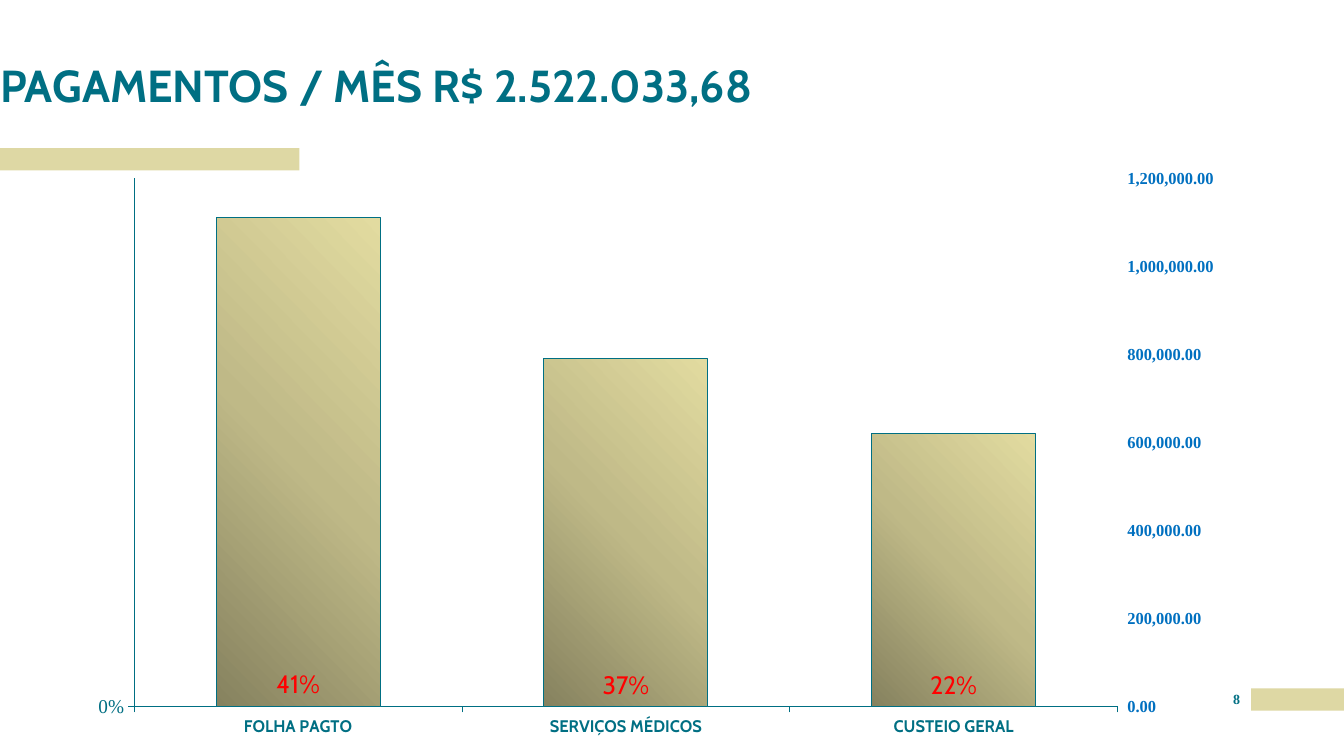
import copy

import pptx
import pptx.chart.axis
import pptx.chart.data
import pptx.dml.color
import pptx.enum.chart
import pptx.enum.shapes
import pptx.enum.text
import pptx.oxml
import pptx.oxml.ns
import pptx.util
from pptx.util import Inches

TEAL = pptx.dml.color.RGBColor(0x00, 0x6F, 0x83)
SAND = pptx.dml.color.RGBColor(0xDE, 0xD8, 0xA4)
BLUE = pptx.dml.color.RGBColor(0x00, 0x70, 0xC0)
RED = pptx.dml.color.RGBColor(0xFF, 0x00, 0x00)
PALE_TEAL = pptx.dml.color.RGBColor(0xA5, 0xE1, 0xE4)

SANS = "Cabin"
SERIF = "Times New Roman"

EXPENSES = ["FOLHA PAGTO", "SERVIÇOS MÉDICOS", "CUSTEIO GERAL"]
SHARES = [0.44, 0.31, 0.25]
SHARE_LABELS = ["41%", "37%", "22%"]
AMOUNTS = [1110000, 790000, 620000]

PLOT_LAYOUT = f"""<c:layout {pptx.oxml.ns.nsdecls("c")}><c:manualLayout>
<c:layoutTarget val="inner"/><c:xMode val="edge"/><c:yMode val="edge"/>
<c:x val="0.088"/><c:y val="0.031"/><c:w val="0.849"/><c:h val="0.905"/>
</c:manualLayout></c:layout>"""

BAR_GRADIENT = f"""<a:gradFill {pptx.oxml.ns.nsdecls("a")} rotWithShape="1"><a:gsLst>
<a:gs pos="0"><a:srgbClr val="86825F"/></a:gs>
<a:gs pos="50000"><a:srgbClr val="BFB987"/></a:gs>
<a:gs pos="100000"><a:srgbClr val="E2DBA0"/></a:gs></a:gsLst>
<a:path path="circle"><a:fillToRect t="100000" r="100000"/></a:path></a:gradFill>"""


class PaymentsSlide:
    def __init__(self, slide):
        self.slide = slide

    def set_font(self, font, size, color, name=SERIF, bold=True):
        font.size = pptx.util.Pt(size)
        font.color.rgb = color
        font.name = name
        font.bold = bold

    def set_line(self, line, color):
        line.color.rgb = color
        line.width = pptx.util.Pt(0.75)

    def clear_margins(self, frame):
        frame.word_wrap = True
        frame.margin_left = frame.margin_right = 0
        frame.margin_top = frame.margin_bottom = 0

    def add_band(self, left, top, width, height):
        band = self.slide.shapes.add_shape(
            pptx.enum.shapes.MSO_SHAPE.RECTANGLE,
            Inches(left), Inches(top), Inches(width), Inches(height))
        band.shadow.inherit = False
        band.fill.solid()
        band.fill.fore_color.rgb = SAND
        band.line.fill.background()

    def set_title(self, text, left, top, width, height):
        title = self.slide.shapes.title
        title.left, title.top = Inches(left), Inches(top)
        title.width, title.height = Inches(width), Inches(height)
        frame = title.text_frame
        frame.text = text
        self.clear_margins(frame)
        frame.auto_size = pptx.enum.text.MSO_AUTO_SIZE.NONE
        frame.vertical_anchor = pptx.enum.text.MSO_ANCHOR.BOTTOM
        heading = frame.paragraphs[0]
        heading.alignment = pptx.enum.text.PP_ALIGN.LEFT
        heading.line_spacing = 0.9
        self.set_font(heading.font, 32, TEAL, SANS)

    def add_page_number(self, text, left, top, width, height):
        box = self.slide.shapes.add_textbox(
            Inches(left), Inches(top), Inches(width), Inches(height))
        box.text_frame.text = text
        self.clear_margins(box.text_frame)
        number = box.text_frame.paragraphs[0]
        number.alignment = pptx.enum.text.PP_ALIGN.CENTER
        self.set_font(number.font, 10, TEAL)

    def scale_axis(self, axis, maximum, step, number_format):
        axis.minimum_scale, axis.maximum_scale = 0, maximum
        axis.major_unit = step
        axis.tick_labels.number_format = number_format
        axis.tick_labels.number_format_is_linked = False

    def add_right_axis(self, chart):
        """Move the last series to its own bars on a right-hand axis."""
        left_bars = chart.element.xpath(".//c:barChart")[0]
        left_category = chart.element.xpath(".//c:catAx")[0]
        left_value = chart.element.xpath(".//c:valAx")[0]
        right_bars, right_category, right_value = map(
            copy.deepcopy, (left_bars, left_category, left_value))
        left_bars.remove(left_bars.xpath("c:ser")[1])
        right_bars.remove(right_bars.xpath("c:ser")[0])

        left_bars.addnext(right_bars)
        left_value.addnext(right_value)
        right_value.addnext(right_category)

        category_id, value_id = "50010", "50020"
        for element, query, value in (
                (right_bars, "c:axId[1]", category_id),
                (right_bars, "c:axId[2]", value_id),
                (right_category, "c:axId", category_id),
                (right_category, "c:crossAx", value_id),
                (right_category, "c:delete", "1"),
                (right_value, "c:axId", value_id),
                (right_value, "c:crossAx", category_id),
                (right_value, "c:axPos", "r"),
                (right_value, "c:crosses", "max")):
            element.xpath(query)[0].set("val", value)
        return right_bars, pptx.chart.axis.ValueAxis(right_value)

    def add_payments_chart(self, left, top, width, height):
        data = pptx.chart.data.CategoryChartData()
        data.categories = EXPENSES
        data.add_series("Series 1", SHARES, "0%")
        data.add_series("Series 2", AMOUNTS, "#,##0.00")
        chart = self.slide.shapes.add_chart(
            pptx.enum.chart.XL_CHART_TYPE.COLUMN_CLUSTERED,
            Inches(left), Inches(top), Inches(width), Inches(height), data).chart
        chart.has_title = chart.has_legend = False
        self.set_font(chart.font, 10, TEAL, bold=False)
        chart.plots[0].gap_width = chart.plots[0].overlap = 100
        chart.plots[0].vary_by_categories = False

        # Axes
        expense_axis, share_axis = chart.category_axis, chart.value_axis
        for axis in (expense_axis, share_axis):
            axis.major_tick_mark = pptx.enum.chart.XL_TICK_MARK.OUTSIDE
            self.set_line(axis.format.line, TEAL)
        share_axis.has_major_gridlines = False
        right_bars, amount_axis = self.add_right_axis(chart)
        self.set_font(expense_axis.tick_labels.font, 12, TEAL, SANS)

        self.scale_axis(share_axis, 100, 10000, "0%")
        self.set_font(share_axis.tick_labels.font, 14, TEAL, bold=False)
        share_axis.has_major_gridlines = True
        self.set_line(share_axis.major_gridlines.format.line, PALE_TEAL)

        self.scale_axis(amount_axis, 1200000, 200000, "#,##0.00")
        self.set_font(amount_axis.tick_labels.font, 12, BLUE)
        amount_axis.format.line.fill.background()

        # Shares with their labels
        shares = chart.plots[0].series[0]
        shares.format.fill.solid()
        shares.format.fill.fore_color.rgb = TEAL
        for index, share in enumerate(SHARE_LABELS):
            label = shares.points[index].data_label
            label.text_frame.text = share
            self.set_font(label.text_frame.paragraphs[0].runs[0].font,
                          18, RED, SANS, bold=False)
            label.position = pptx.enum.chart.XL_LABEL_POSITION.OUTSIDE_END

        # Amounts with a gradient
        self.set_line(chart.plots[1].series[0].format.line, TEAL)
        right_bars.xpath("c:ser/c:spPr")[0].insert(
            0, pptx.oxml.parse_xml(BAR_GRADIENT))

        # Plot position
        plot_area = chart.element.xpath(".//c:plotArea")[0]
        for layout in plot_area.xpath("c:layout"):
            plot_area.remove(layout)
        plot_area.insert(0, pptx.oxml.parse_xml(PLOT_LAYOUT))


def main():
    presentation = pptx.Presentation()
    presentation.slide_width = Inches(13.33)
    presentation.slide_height = Inches(7.5)
    title_only = presentation.slide_layouts[5]
    payments = PaymentsSlide(presentation.slides.add_slide(title_only))

    # Decorative bands
    payments.add_band(12.41, 6.83, 0.92, 0.22)
    payments.add_band(0, 1.47, 2.97, 0.22)

    # Content
    payments.set_title("PAGAMENTOS / MÊS R$ 2.522.033,68", 0, 0.46, 8.53, 0.65)
    payments.add_payments_chart(0.32, 1.59, 11.72, 5.79)
    payments.add_page_number("8", 12.12, 6.85, 0.29, 0.25)

    presentation.save("out.pptx")


if __name__ == "__main__":
    main()
